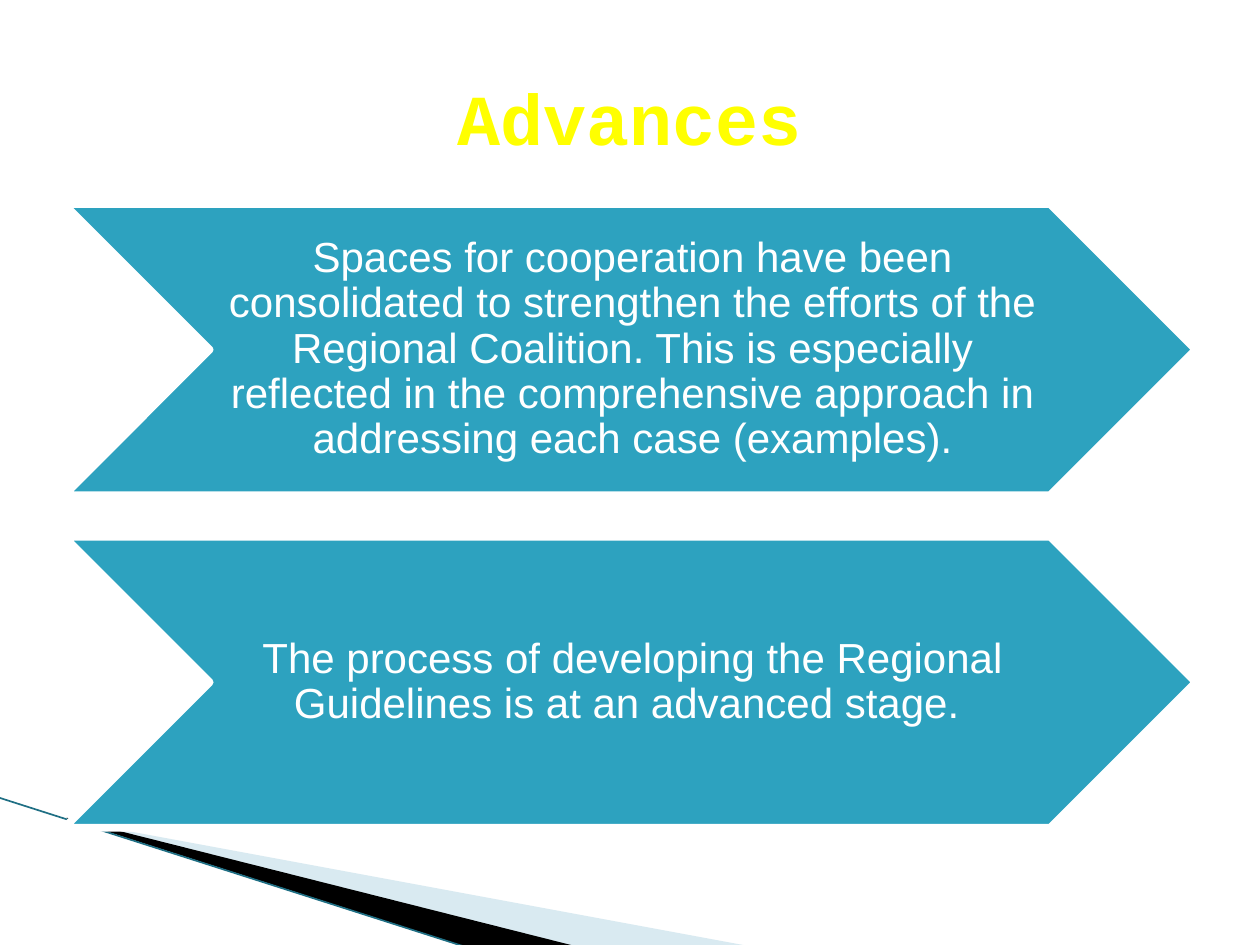
import pptx
import pptx.util
import pptx.dml.color
import pptx.enum.shapes
import pptx.enum.text
import pptx.oxml
import pptx.oxml.ns
import lxml.etree

COLORS = {
    "title": "FFFF00",
    "chevron": "2DA2BF",
    "white": "FFFFFF",
    "pale wedge": "A0CBDC",
    "dark wedge": "000000",
    "edge": "1F6F84",
}
ADVANCES = [
    "Spaces for cooperation have been consolidated to strengthen the efforts of the "
    "Regional Coalition. This is especially reflected in the comprehensive approach in "
    "addressing each case (examples).",
    "The process of developing the Regional Guidelines is at an advanced stage. ",
]
# Corners as percentages of the slide's width and height, with opacity in percent
WEDGES = [
    ("pale wedge", 40, [(5.5, 86.8), (59.5, 100.13), (45.6, 100.13), (5.5, 86.67)]),
    ("dark wedge", 100, [(5.3, 86.53), (45.7, 100.13), (37.2, 100.27), (5.4, 86.67)]),
]

deck = pptx.Presentation()
deck.slide_width = pptx.util.Inches(10)
deck.slide_height = pptx.util.Inches(7.5)
page = deck.slides.add_slide(deck.slide_layouts[5])


def place(x, y):
    """Turn percentages of the slide's width and height into lengths."""
    return int(deck.slide_width * x / 100), int(deck.slide_height * y / 100)


def color(name):
    return pptx.dml.color.RGBColor.from_string(COLORS[name])


# Corner decoration
for name, opacity, corners in WEDGES:
    points = [place(x, y) for x, y in corners]
    builder = page.shapes.build_freeform(*points[0])
    builder.add_line_segments(points[1:], close=True)
    wedge = builder.convert_to_shape()
    wedge.shadow.inherit = False
    wedge.line.fill.background()
    wedge.fill.solid()
    wedge.fill.fore_color.rgb = color(name)
    if opacity < 100:
        fill_color = wedge.fill._xPr.find(".//" + pptx.oxml.ns.qn("a:srgbClr"))
        alpha = lxml.etree.SubElement(fill_color, pptx.oxml.ns.qn("a:alpha"))
        alpha.set("val", str(opacity * 1000))

edge = page.shapes.add_connector(
    pptx.enum.shapes.MSO_CONNECTOR.STRAIGHT, *place(-0.1, 84.4), *place(37.1, 100.27))
edge.line.color.rgb = color("edge")
edge.line.width = pptx.util.Pt(0.95)
lxml.etree.SubElement(edge._element.spPr, pptx.oxml.ns.qn("a:effectLst"))

# One chevron with its text per advance
for row, wording in enumerate(ADVANCES):
    top = 21.6 + 35.2 * row
    group = page.shapes.add_group_shape()
    chevron = group.shapes.add_shape(
        pptx.enum.shapes.MSO_SHAPE.CHEVRON, *place(5.1, top), *place(89.8, 30.8))
    chevron.shadow.inherit = False
    chevron.fill.solid()
    chevron.fill.fore_color.rgb = color("chevron")
    chevron.line.color.rgb = color("white")
    chevron.line.width = pptx.util.Pt(4.33)

    box = group.shapes.add_textbox(*place(16.7, top), *place(66.7, 30.8))
    frame = box.text_frame
    frame.word_wrap = True
    frame.vertical_anchor = pptx.enum.text.MSO_ANCHOR.MIDDLE
    frame.margin_left = pptx.util.Inches(0.03)
    frame.margin_right = 0
    frame.margin_top = frame.margin_bottom = pptx.util.Inches(0.02)
    para = frame.paragraphs[0]
    para.alignment = pptx.enum.text.PP_ALIGN.CENTER
    para.line_spacing = 0.9
    para.space_after = pptx.util.Pt(8.4)
    span = para.add_run()
    span.text = wording
    span.font.name = "Arial"
    span.font.size = pptx.util.Pt(24)
    span.font.color.rgb = color("white")

# Title
title = page.shapes.title
title.left, title.top = place(5, 4)
title.width, title.height = place(90, 16.67)
title.text_frame.vertical_anchor = pptx.enum.text.MSO_ANCHOR.MIDDLE
para = title.text_frame.paragraphs[0]
para.alignment = pptx.enum.text.PP_ALIGN.CENTER
span = para.add_run()
span.text = "Advances"
span.font.name = "Courier New"
span.font.size = pptx.util.Pt(41)
span.font.bold = True
span.font.color.rgb = color("title")

deck.save("out.pptx")
